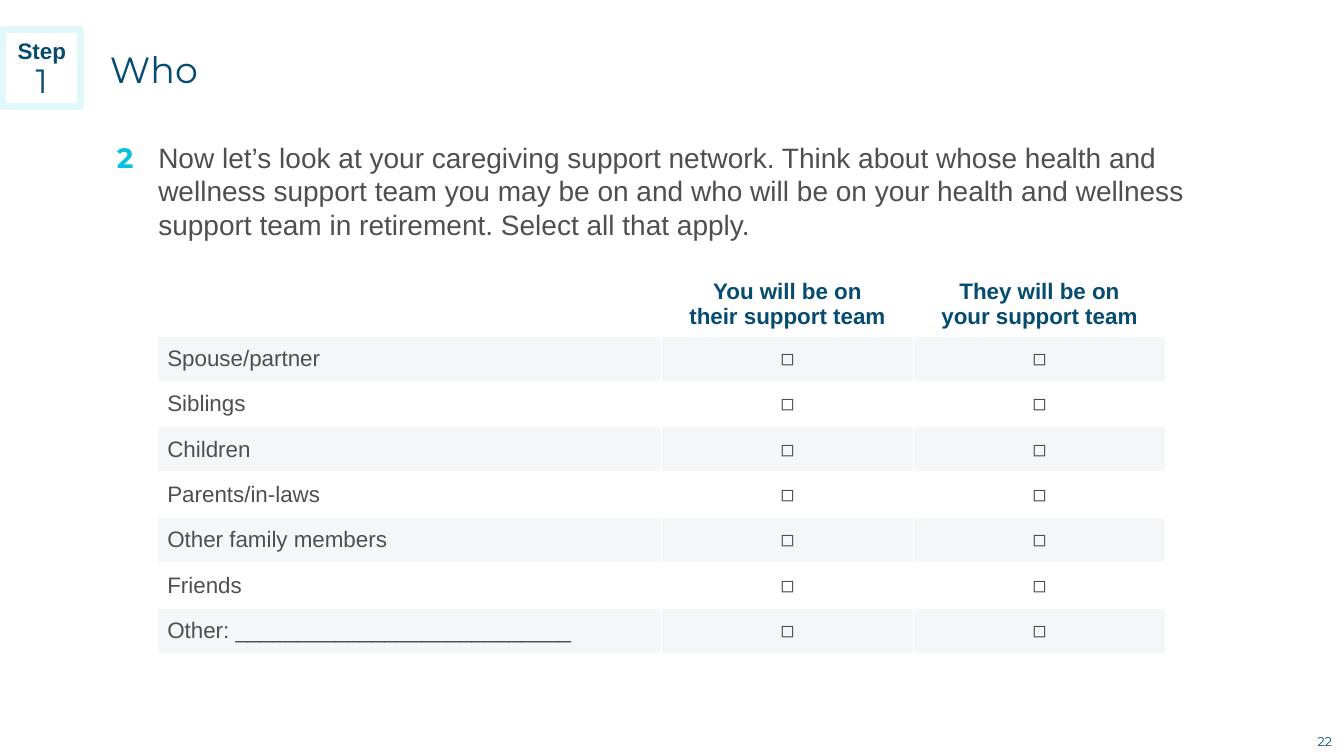
import pptx
import pptx.dml.color
import pptx.enum.shapes
import pptx.enum.text
import pptx.util

Inches = pptx.util.Inches
Pt = pptx.util.Pt
RGBColor = pptx.dml.color.RGBColor
ALIGN = pptx.enum.text.PP_ALIGN
MIDDLE = pptx.enum.text.MSO_ANCHOR.MIDDLE

NAVY = RGBColor(0x05, 0x4C, 0x70)
CYAN = RGBColor(0x05, 0xC3, 0xDE)
PALE_CYAN = RGBColor(0xE1, 0xF8, 0xFB)
GREY = RGBColor(0x4F, 0x4F, 0x4F)
BAND = RGBColor(0xF4, 0xF6, 0xF8)
WHITE = RGBColor(0xFF, 0xFF, 0xFF)

BODY_FONT = "Arial"
ACCENT_FONT = "Montserrat"

CHECKBOX = "◻︎"
HEADINGS = ["", "You will be on\vtheir support team", "They will be on\vyour support team"]
PEOPLE = [
    "Spouse/partner",
    "Siblings",
    "Children",
    "Parents/in-laws",
    "Other family members",
    "Friends",
    "Other: ___________________________",
]
QUESTION = (
    "Now let’s look at your caregiving support network. Think about whose health and "
    "wellness support team you may be on and who will be on your health and wellness "
    "support team in retirement. Select all that apply."
)


def style_paragraph(paragraph, size, color, font=BODY_FONT, bold=False, align=ALIGN.LEFT):
    paragraph.alignment = align
    for run in paragraph.runs:
        run.font.name = font
        run.font.size = Pt(size)
        run.font.bold = bold
        run.font.color.rgb = color


def set_margins(text_frame, top=0):
    text_frame.margin_left = text_frame.margin_right = text_frame.margin_bottom = 0
    text_frame.margin_top = Inches(top)
    text_frame.word_wrap = True


def add_text(slide, text, left, top, width, height, **style):
    box = slide.shapes.add_textbox(Inches(left), Inches(top), Inches(width), Inches(height))
    set_margins(box.text_frame)
    box.text_frame.text = text
    style_paragraph(box.text_frame.paragraphs[0], **style)
    return box.text_frame


def place_title(slide, left, top, width, height):
    title = slide.shapes.title
    title.left, title.top = Inches(left), Inches(top)
    title.width, title.height = Inches(width), Inches(height)
    set_margins(title.text_frame)
    title.text_frame.vertical_anchor = MIDDLE
    title.text_frame.text = "Who"
    style_paragraph(title.text_frame.paragraphs[0], 26, NAVY, ACCENT_FONT)


def add_step_badge(slide, left, top, side):
    badge = slide.shapes.add_shape(
        pptx.enum.shapes.MSO_SHAPE.RECTANGLE,
        Inches(left), Inches(top), Inches(side), Inches(side))
    badge.shadow.inherit = False
    badge.fill.solid()
    badge.fill.fore_color.rgb = WHITE
    badge.line.color.rgb = PALE_CYAN
    badge.line.width = Pt(5)
    set_margins(badge.text_frame, top=0.05)
    badge.text_frame.vertical_anchor = MIDDLE
    badge.text_frame.text = "Step\n1"
    label, number = badge.text_frame.paragraphs
    style_paragraph(label, 16, NAVY, bold=True, align=ALIGN.CENTER)
    style_paragraph(number, 24, NAVY, ACCENT_FONT, align=ALIGN.CENTER)
    label.line_spacing = number.line_spacing = 0.9


def add_question(slide, left, top, width):
    indent = 0.41
    body = add_text(slide, QUESTION, left + indent, top, width - indent, 1.01,
                    size=20, color=GREY)
    body.paragraphs[0].line_spacing = Pt(24)
    add_text(slide, "2", left, top, 0.4, 0.34,
             size=20, color=CYAN, font=ACCENT_FONT, bold=True)


def add_support_table(slide, left, top, width):
    header_height, row_height = 0.63, 0.45
    rows = [HEADINGS] + [[person, CHECKBOX, CHECKBOX] for person in PEOPLE]
    height = header_height + row_height * len(PEOPLE)
    table = slide.shapes.add_table(
        len(rows), len(HEADINGS),
        Inches(left), Inches(top), Inches(width), Inches(height)).table
    for column, share in zip(table.columns, (0.5, 0.25, 0.25)):
        column.width = Inches(width * share)

    for row_index, texts in enumerate(rows):
        is_header = row_index == 0
        table.rows[row_index].height = Inches(header_height if is_header else row_height)
        for column_index, text in enumerate(texts):
            cell = table.cell(row_index, column_index)
            cell.vertical_anchor = MIDDLE
            # Odd rows are banded
            if row_index % 2:
                cell.fill.solid()
                cell.fill.fore_color.rgb = BAND
            else:
                cell.fill.background()
            cell.text_frame.text = text
            style_paragraph(
                cell.text_frame.paragraphs[0], 16, NAVY if is_header else GREY,
                bold=is_header or column_index > 0,
                align=ALIGN.CENTER if column_index else ALIGN.LEFT)


def add_slide_number(slide, left, top, width, height):
    frame = add_text(slide, "22", left, top, width, height,
                     size=9, color=NAVY, font=ACCENT_FONT, align=ALIGN.CENTER)
    frame.vertical_anchor = MIDDLE


def build_who_slide(presentation):
    slide = presentation.slides.add_slide(presentation.slide_layouts[5])
    add_slide_number(slide, 12.97, 7.23, 0.34, 0.25)
    place_title(slide, 1.09, 0.28, 11.16, 0.81)
    add_question(slide, 1.16, 1.39, 10.71)
    add_support_table(slide, 1.56, 2.7, 10)
    add_step_badge(slide, 0.03, 0.29, 0.77)


def main():
    presentation = pptx.Presentation()
    presentation.slide_width = Inches(13.33)
    presentation.slide_height = Inches(7.5)
    build_who_slide(presentation)
    presentation.save("out.pptx")


if __name__ == "__main__":
    main()
